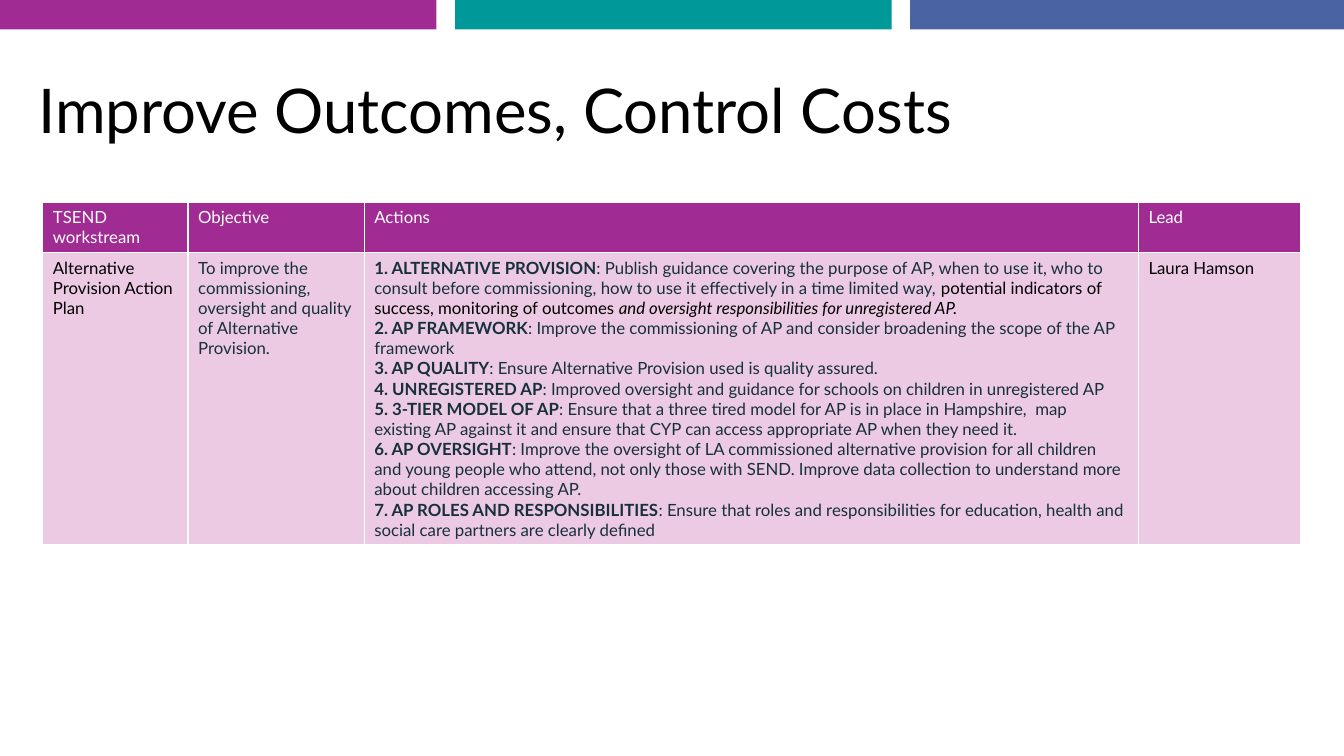
from dataclasses import dataclass

from lxml.etree import SubElement
from pptx import Presentation
from pptx.dml.color import RGBColor as RGB
from pptx.enum.shapes import MSO_SHAPE as Shape
from pptx.enum.text import MSO_ANCHOR as Anchor, PP_ALIGN as Align
from pptx.oxml.ns import qn
from pptx.util import Cm, Pt


@dataclass(frozen=True)
class Theme:
    font: str = "Lato"
    title_size: int = 44
    table_size: int = 12
    black: str = "000000"
    white: str = "FFFFFF"
    ink: str = "17303B"
    purple: str = "A02B93"
    teal: str = "009999"
    blue: str = "4A63A3"
    pink: str = "ECCAE3"


THEME = Theme()


@dataclass(frozen=True)
class Text:
    text: str
    color: str = THEME.ink
    bold: bool = False
    italic: bool = False


@dataclass(frozen=True)
class Action:
    name: str
    detail: str
    extra: tuple[Text, ...] = ()

    def runs(self, number: int) -> list[Text]:
        return [Text(f"{number}. {self.name}", bold=True),
                Text(f": {self.detail}"), *self.extra]


ACTIONS = [
    Action("ALTERNATIVE PROVISION",
           "Publish guidance covering the purpose of AP, when to use it, who to consult before "
           "commissioning, how to use it effectively in a time limited way, ",
           (Text("potential indicators of success, monitoring of outcomes ", THEME.black),
            Text("and oversight responsibilities for unregistered AP.", THEME.black, italic=True))),
    Action("AP FRAMEWORK",
           "Improve the commissioning of AP and consider broadening the scope of the AP framework"),
    Action("AP QUALITY", "Ensure Alternative Provision used is quality assured."),
    Action("UNREGISTERED AP",
           "Improved oversight and guidance for schools on children in unregistered AP"),
    Action("3-TIER MODEL OF AP",
           "Ensure that a three tired model for AP is in place in Hampshire,  map existing AP "
           "against it and ensure that CYP can access appropriate AP when they need it."),
    Action("AP OVERSIGHT",
           "Improve the oversight of LA commissioned alternative provision for all children and "
           "young people who attend, not only those with SEND. Improve data collection to "
           "understand more about children accessing AP."),
    Action("AP ROLES AND RESPONSIBILITIES",
           "Ensure that roles and responsibilities for education, health and social care partners "
           "are clearly defined"),
]

HEADINGS = ["TSEND workstream", "Objective", "Actions", "Lead"]
ROWS = [
    [[[Text(heading, THEME.white)]] for heading in HEADINGS],
    [[[Text("Alternative Provision Action Plan", THEME.black)]],
     [[Text("To improve the commissioning, oversight and quality of Alternative Provision.")]],
     [action.runs(n) for n, action in enumerate(ACTIONS, 1)],
     [[Text("Laura Hamson", THEME.black)]]],
]
ROW_FILLS = [THEME.purple, THEME.pink]
ROW_HEIGHTS = [1.27, 7.37]
COLUMN_WIDTHS = [3.66, 4.44, 19.51, 4.09]
BAR_WIDTH, BAR_HEIGHT, BAR_PITCH = 11, 0.74, 11.47


def add_run(p, text: Text, size: int) -> None:
    r = p.add_run()
    r.text = text.text
    r.font.name = THEME.font
    r.font.size = Pt(size)
    r.font.bold = text.bold
    r.font.italic = text.italic
    r.font.color.rgb = RGB.from_string(text.color)


def add_bars(s) -> None:
    for i, color in enumerate([THEME.purple, THEME.teal, THEME.blue]):
        bar = s.shapes.add_shape(Shape.RECTANGLE, Cm(i * BAR_PITCH), 0,
                                 Cm(BAR_WIDTH), Cm(BAR_HEIGHT))
        bar.shadow.inherit = False
        bar.fill.solid()
        bar.fill.fore_color.rgb = RGB.from_string(color)
        bar.line.fill.background()


def set_title(s, text: str) -> None:
    title = s.shapes.title
    title.left, title.top, title.width, title.height = Cm(0.71), Cm(1.02), Cm(32.44), Cm(3.68)
    tf = title.text_frame
    tf.vertical_anchor = Anchor.MIDDLE
    p = tf.paragraphs[0]
    p.alignment = Align.LEFT
    p.line_spacing = 0.9
    add_run(p, Text(text, THEME.black), THEME.title_size)


def style_cell(cell, fill: str) -> None:
    """Give the cell a plain fill and thin white borders."""
    cell.fill.solid()
    cell.fill.fore_color.rgb = RGB.from_string(fill)
    props = cell._tc.get_or_add_tcPr()
    for i, side in enumerate("LRTB"):
        line = SubElement(props, qn(f"a:ln{side}"), w=str(Pt(1)))
        color = SubElement(SubElement(line, qn("a:solidFill")), qn("a:srgbClr"))
        color.set("val", THEME.white)
        props.insert(i, line)


def fill_cell(cell, paragraphs: list[list[Text]]) -> None:
    tf = cell.text_frame
    for i, texts in enumerate(paragraphs):
        p = tf.add_paragraph() if i else tf.paragraphs[0]
        for text in texts:
            add_run(p, text, THEME.table_size)


def add_plan_table(s) -> None:
    table = s.shapes.add_table(len(ROWS), len(HEADINGS), Cm(1.08), Cm(5.09),
                               Cm(sum(COLUMN_WIDTHS)), Cm(sum(ROW_HEIGHTS))).table
    for column, width in zip(table.columns, COLUMN_WIDTHS):
        column.width = Cm(width)
    for row, height, fill, contents in zip(table.rows, ROW_HEIGHTS, ROW_FILLS, ROWS):
        row.height = Cm(height)
        for cell, paragraphs in zip(row.cells, contents):
            style_cell(cell, fill)
            fill_cell(cell, paragraphs)


def main() -> None:
    prs = Presentation()
    prs.slide_width, prs.slide_height = Cm(33.87), Cm(19.05)
    s = prs.slides.add_slide(prs.slide_layouts[5])
    add_bars(s)
    set_title(s, "Improve Outcomes, Control Costs")
    add_plan_table(s)
    prs.save("out.pptx")


if __name__ == "__main__":
    main()
